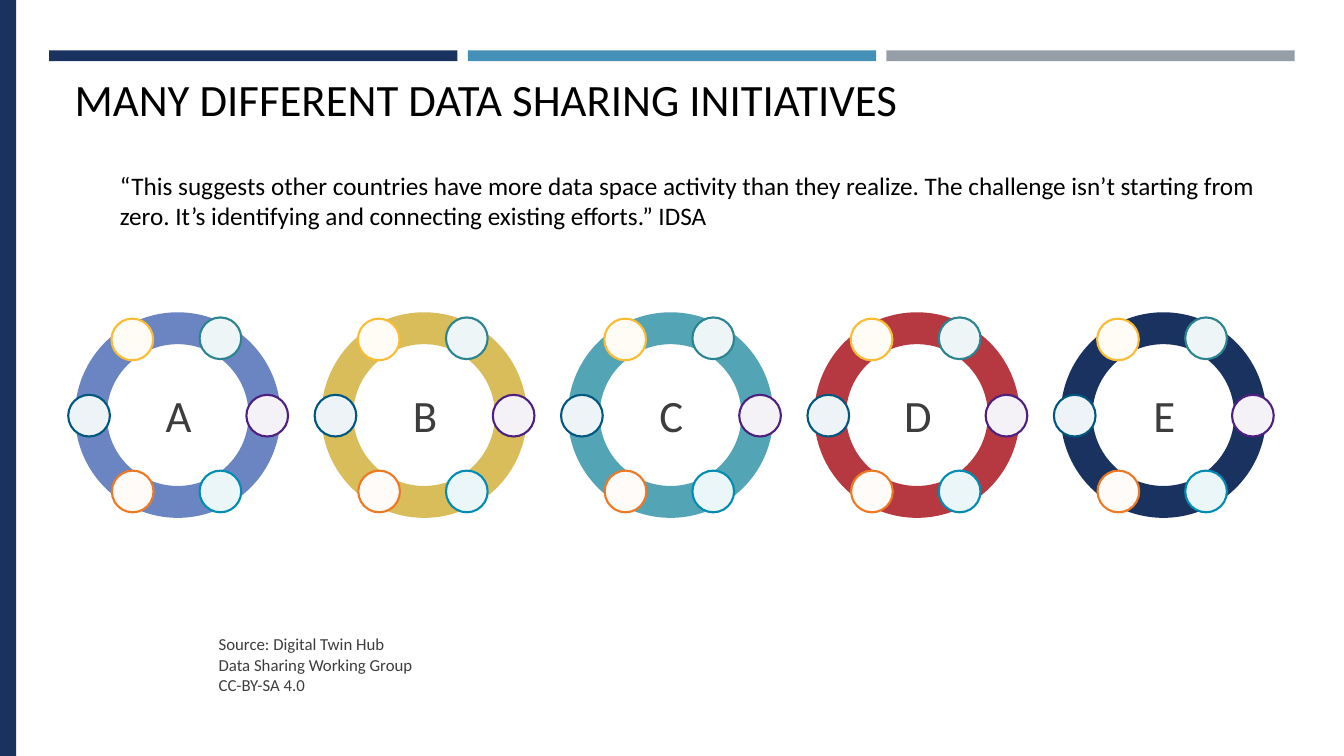
from pptx import Presentation
from pptx.dml.color import RGBColor
from pptx.enum.shapes import MSO_SHAPE
from pptx.enum.text import MSO_ANCHOR, PP_ALIGN
from pptx.util import Cm, Pt

RECTANGLE, OVAL, DONUT = MSO_SHAPE.RECTANGLE, MSO_SHAPE.OVAL, MSO_SHAPE.DONUT
LEFT, CENTER = PP_ALIGN.LEFT, PP_ALIGN.CENTER
TOP, MIDDLE = MSO_ANCHOR.TOP, MSO_ANCHOR.MIDDLE

BLACK = RGBColor(0x00, 0x00, 0x00)
CHARCOAL = RGBColor(0x3D, 0x3D, 0x3D)
NAVY = RGBColor(0x1A, 0x32, 0x60)
BLUE = RGBColor(0x45, 0x90, 0xB8)
GREY = RGBColor(0x96, 0x9F, 0xA7)
PERIWINKLE = RGBColor(0x6A, 0x85, 0xC2)
GOLD = RGBColor(0xD8, 0xBD, 0x5A)
TEAL = RGBColor(0x53, 0xA5, 0xB5)
RED = RGBColor(0xB6, 0x38, 0x41)
PALE_GREEN, GREEN = RGBColor(0xEE, 0xF5, 0xF6), RGBColor(0x2B, 0x84, 0x8F)
PALE_YELLOW, YELLOW = RGBColor(0xFF, 0xFC, 0xF5), RGBColor(0xFB, 0xBC, 0x33)
PALE_PURPLE, PURPLE = RGBColor(0xF4, 0xF2, 0xF7), RGBColor(0x4E, 0x20, 0x80)
PALE_BLUE, DEEP_BLUE = RGBColor(0xED, 0xF3, 0xF6), RGBColor(0x00, 0x58, 0x80)
PALE_CYAN, CYAN = RGBColor(0xEB, 0xF6, 0xF9), RGBColor(0x00, 0x8C, 0xB3)
PALE_ORANGE, ORANGE = RGBColor(0xFF, 0xFB, 0xF8), RGBColor(0xEF, 0x79, 0x23)

BAR_WIDTH, BAR_PITCH = 10.29, 10.55
RING_LEFT, RING_TOP, RING_SIZE, RING_PITCH = 1.89, 7.87, 5.18, 6.21
NODE_SIZE = 1.05

# Node offsets from the ring's top left corner, with fill and outline
NODES = [
    (3.14, 0.13, PALE_GREEN, GREEN),
    (0.92, 0.16, PALE_YELLOW, YELLOW),
    (4.32, 2.08, PALE_PURPLE, PURPLE),
    (-0.17, 2.08, PALE_BLUE, DEEP_BLUE),
    (3.14, 3.99, PALE_CYAN, CYAN),
    (0.93, 3.99, PALE_ORANGE, ORANGE),
]
INITIATIVES = [("A", PERIWINKLE), ("B", GOLD), ("C", TEAL), ("D", RED), ("E", NAVY)]


class SlideBuilder:
    font_name = "Calibri"

    def __init__(self, slide):
        self.slide = slide

    def shape(self, kind, left, top, width, height, fill, outline=None):
        shape = self.slide.shapes.add_shape(
            kind, Cm(left), Cm(top), Cm(width), Cm(height))
        shape.shadow.inherit = False
        shape.fill.solid()
        shape.fill.fore_color.rgb = fill
        if outline is None:
            shape.line.fill.background()
        else:
            shape.line.color.rgb = outline
            shape.line.width = Pt(1.5)
        return shape

    def text(self, left, top, width, height, lines, size, color, align=LEFT,
             anchor=TOP, inset=True, line_spacing=None):
        box = self.slide.shapes.add_textbox(
            Cm(left), Cm(top), Cm(width), Cm(height))
        frame = box.text_frame
        frame.word_wrap = True
        frame.vertical_anchor = anchor
        if not inset:
            frame.margin_left = frame.margin_right = 0
            frame.margin_top = frame.margin_bottom = 0
        for index, line in enumerate(lines):
            paragraph = frame.add_paragraph() if index else frame.paragraphs[0]
            paragraph.alignment = align
            paragraph.line_spacing = line_spacing
            run = paragraph.add_run()
            run.text = line
            run.font.name = self.font_name
            run.font.size = Pt(size)
            run.font.color.rgb = color

    def initiative(self, left, top, letter, color):
        ring = self.shape(DONUT, left, top, RING_SIZE, RING_SIZE, color)
        ring.adjustments[0] = 0.155
        for across, down, fill, outline in NODES:
            self.shape(OVAL, left + across, top + down,
                       NODE_SIZE, NODE_SIZE, fill, outline)
        self.text(left + 1.06, top + 1.78, 3.1, 1.6, [letter], 32, CHARCOAL,
                  align=CENTER, anchor=MIDDLE, inset=False)


def main():
    presentation = Presentation()
    presentation.slide_width = Cm(33.87)
    presentation.slide_height = Cm(19.05)
    slide = presentation.slides.add_slide(presentation.slide_layouts[6])
    builder = SlideBuilder(slide)

    # Side band and top bars
    builder.shape(RECTANGLE, 0, 0, 0.41, 19.05, NAVY)
    for index, color in enumerate([NAVY, BLUE, GREY]):
        builder.shape(RECTANGLE, 1.24 + index * BAR_PITCH, 1.27,
                      BAR_WIDTH, 0.27, color)

    # Title and quotation
    builder.text(1.63, 1.88, 28.24, 2.34,
                 ["MANY DIFFERENT DATA SHARING INITIATIVES"],
                 32, BLACK, line_spacing=0.85)
    builder.text(2.77, 4.17, 29.16, 1.8, [
        "“This suggests other countries have more data space activity than "
        "they realize. The challenge isn’t starting from zero. It’s "
        "identifying and connecting existing efforts.” IDSA"], 18, BLACK)

    # Row of initiatives
    for index, (letter, color) in enumerate(INITIATIVES):
        builder.initiative(RING_LEFT + index * RING_PITCH, RING_TOP, letter, color)

    # Source credit
    builder.text(5.51, 15.98, 6, 2.54, [
        "Source: Digital Twin Hub",
        "Data Sharing Working Group",
        "CC-BY-SA 4.0"], 12, CHARCOAL, inset=False)

    presentation.save("out.pptx")


if __name__ == "__main__":
    main()
